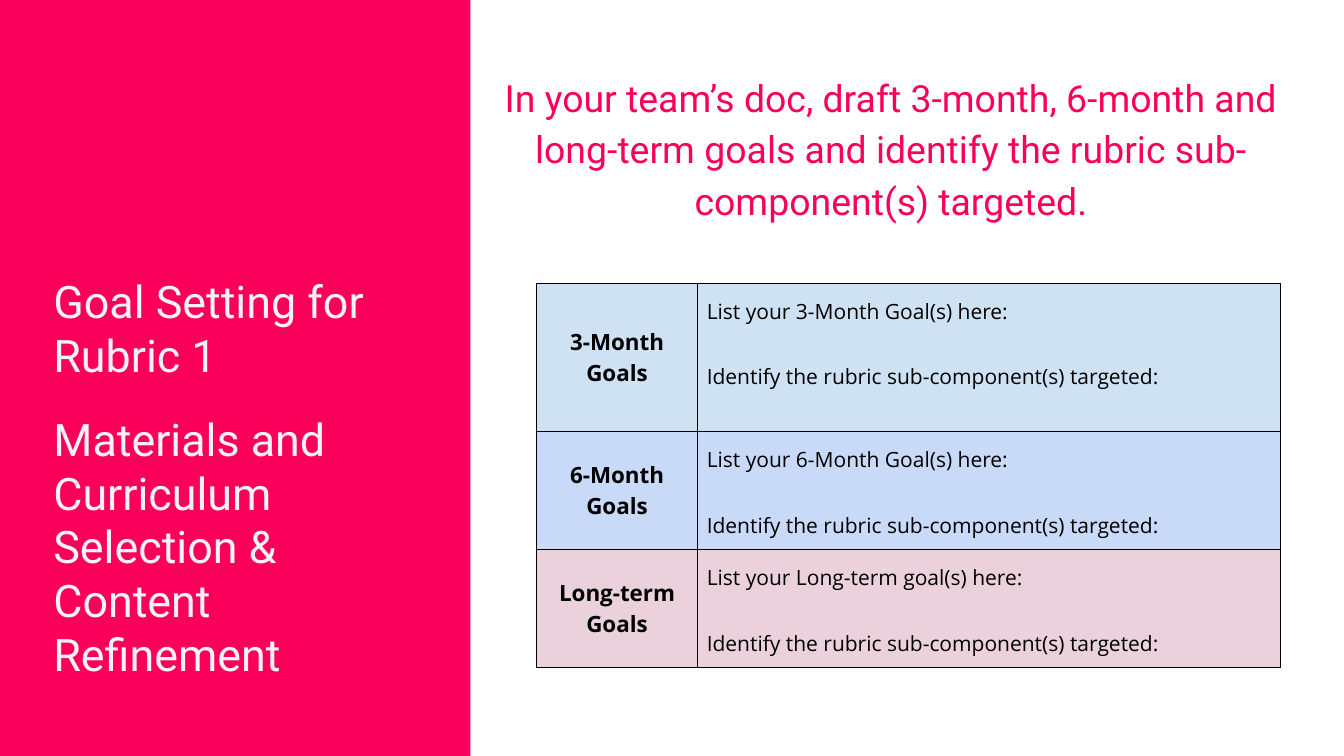
from lxml import etree
from pptx import Presentation
from pptx.dml.color import RGBColor
from pptx.enum.shapes import MSO_SHAPE
from pptx.enum.text import MSO_ANCHOR, PP_ALIGN
from pptx.oxml import parse_xml
from pptx.util import Inches, Pt

CENTER = PP_ALIGN.CENTER
MIDDLE = MSO_ANCHOR.MIDDLE
RECT = MSO_SHAPE.RECTANGLE
NS = "http://schemas.openxmlformats.org/drawingml/2006/main"
W, H = 13.33, 7.5
PINK, PALE, BLACK = "FB005A", "F3F3F3", "000000"
INSET = Inches(0.13)


def rgb(value):
    return RGBColor.from_string(value)


def write(tf, texts, font, size, color, bold=False, align=None, spacing=None, gap=0):
    """Fill a text frame with one paragraph per text, gap points apart."""
    tf.word_wrap = True
    for i, text in enumerate(texts):
        p = tf.paragraphs[0] if i == 0 else tf.add_paragraph()
        p.text = text
        p.alignment = align
        p.line_spacing = spacing
        if i:
            p.space_before = Pt(gap)
        p.font.name, p.font.size, p.font.bold = font, Pt(size), bold
        p.font.color.rgb = rgb(color)


prs = Presentation()
prs.slide_width, prs.slide_height = Inches(W), Inches(H)
s = prs.slides.add_slide(prs.slide_layouts[6])

# Left panel
panel = s.shapes.add_shape(RECT, 0, 0, Inches(W * 0.35), Inches(H))
panel.shadow.inherit = False
panel.fill.solid()
panel.fill.fore_color.rgb = rgb(PINK)
panel.line.fill.background()

title = s.shapes.add_textbox(Inches(0.53), Inches(2.59), Inches(3.9), Inches(4.1))
tf = title.text_frame
tf.margin_left = 0
tf.margin_top = tf.margin_right = tf.margin_bottom = INSET
write(tf, ["Goal Setting for Rubric 1",
           "Materials and Curriculum Selection & Content Refinement"],
      "Roboto", 32, PALE, gap=21.3)

# Instruction
task = s.shapes.add_textbox(Inches(4.78), Inches(0.41), Inches(8.12), Inches(2.07))
tf = task.text_frame
tf.margin_left = tf.margin_top = tf.margin_right = tf.margin_bottom = INSET
tf.vertical_anchor = MIDDLE
write(tf, ["In your team’s doc, draft 3-month, 6-month and long-term goals "
           "and identify the rubric sub-component(s) targeted."],
      "Roboto", 26.7, PINK, align=CENTER, spacing=1.15)

# Goals table
goals = [
    ("3-Month Goals", "3-Month Goal(s)", "CFE2F3", 1.47),
    ("6-Month Goals", "6-Month Goal(s)", "C9DAF8", 1.17),
    ("Long-term Goals", "Long-term goal(s)", "EAD1DC", 1.17),
]
col_widths = [1.6, 5.78]
frame = s.shapes.add_table(len(goals), len(col_widths), Inches(5.32), Inches(2.81),
                           Inches(sum(col_widths)), Inches(sum(g[3] for g in goals)))
table = frame.table
for col, width in zip(table.columns, col_widths):
    col.width = Inches(width)

for row, (label, goal, fill, height) in zip(table.rows, goals):
    row.height = Inches(height)
    head, body = row.cells
    for cell in (head, body):
        cell.margin_left = cell.margin_right = Inches(0.09)
        cell.margin_top = cell.margin_bottom = Inches(0.09)
        tcPr = cell._tc.get_or_add_tcPr()
        for side in ("lnL", "lnR", "lnT", "lnB"):
            ln = parse_xml(f'<a:{side} xmlns:a="{NS}" w="{Pt(0.75)}"/>')
            paint = etree.SubElement(ln, f"{{{NS}}}solidFill")
            etree.SubElement(paint, f"{{{NS}}}srgbClr", val=BLACK)
            tcPr.append(ln)
        cell.fill.solid()
        cell.fill.fore_color.rgb = rgb(fill)
    head.vertical_anchor = MIDDLE
    write(head.text_frame, [label], "Open Sans", 16, BLACK, bold=True, align=CENTER)
    write(body.text_frame, [f"List your {goal} here:",
                            "Identify the rubric sub-component(s) targeted:"],
          "Open Sans", 15, BLACK, spacing=1.15, gap=23.5)

prs.save("out.pptx")
